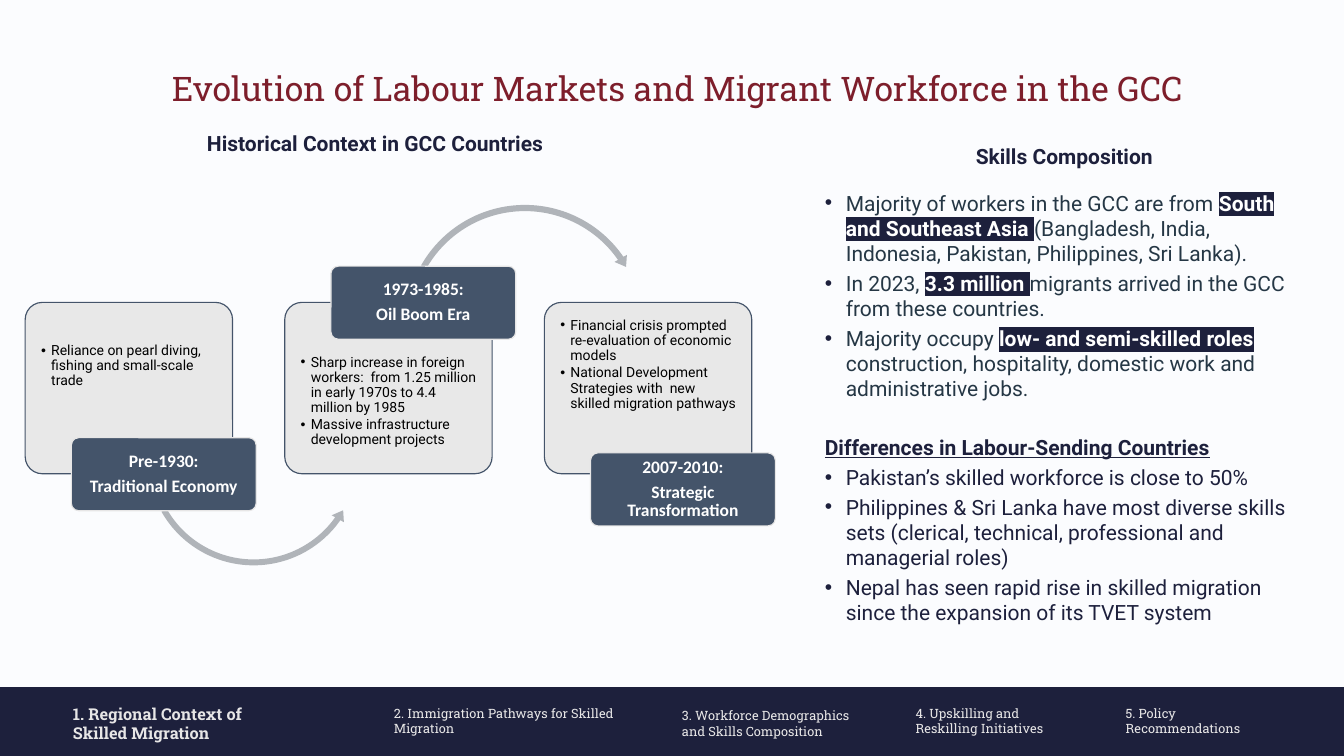
from lxml import etree
from pptx import Presentation
from pptx.dml.color import RGBColor
from pptx.enum.shapes import MSO_SHAPE
from pptx.enum.text import MSO_ANCHOR, MSO_AUTO_SIZE, PP_ALIGN
from pptx.oxml.ns import qn
from pptx.util import Pt

RECTANGLE, ROUNDED = MSO_SHAPE.RECTANGLE, MSO_SHAPE.ROUNDED_RECTANGLE
ARROW_UNDER, ARROW_OVER = MSO_SHAPE.LEFT_CIRCULAR_ARROW, MSO_SHAPE.CIRCULAR_ARROW
TOP, MIDDLE = MSO_ANCHOR.TOP, MSO_ANCHOR.MIDDLE
LEFT, CENTER = PP_ALIGN.LEFT, PP_ALIGN.CENTER

PAPER = RGBColor(0xFB, 0xFC, 0xFE)
NAVY = RGBColor(0x1D, 0x20, 0x3C)
MAROON = RGBColor(0x7D, 0x1E, 0x2B)
SLATE = RGBColor(0x44, 0x54, 0x6A)
INK = RGBColor(0x25, 0x37, 0x45)
PALE = RGBColor(0xE7, 0xE6, 0xE6)
ARROW_GREY = RGBColor(0xB0, 0xB4, 0xB9)
WHITE = RGBColor(0xFF, 0xFF, 0xFF)
BLACK = RGBColor(0, 0, 0)

TITLE = {"name": "Roboto Slab", "size": Pt(29), "bold": False, "color": MAROON}
HEADING = {"name": "Roboto", "size": Pt(18), "bold": True, "color": NAVY}
UNDERLINED = {**HEADING, "underline": True}
SKILLS = {**HEADING, "bold": False, "color": INK}
MARKED = {**HEADING, "color": WHITE, "highlight": NAVY}
COUNTRIES = {**HEADING, "bold": False}
CARD = {"name": "Roboto", "size": Pt(12), "color": BLACK}
LABEL = {"name": "Calibri", "size": Pt(15), "bold": True, "color": WHITE}
STEP = {"name": "Roboto Slab", "size": Pt(11), "color": PALE}
CURRENT_STEP = {**STEP, "size": Pt(14), "bold": True}

# Card text, inset of the card text, label text, label offset,
# arrow (preset, left, top, size, adjustments)
STAGES = [
    (["Reliance on pearl diving, fishing and small-scale trade"], 31,
     ["Pre-1930:", "Traditional Economy"], 116,
     (ARROW_UNDER, 101.5, 40.3, 188.6, (0.027, 3.351, 21.106, 90.245, 0.032))),
    (["Sharp increase in foreign workers:  from 1.25 million in early 1970s "
      "to 4.4 million by 1985",
      "Massive infrastructure development projects"], 41,
     ["1973-1985:", "Oil Boom Era"], -31,
     (ARROW_OVER, 100, -87, 211.7, (0.025, 2.97, 195.275, 125.755, 0.029))),
    (["Financial crisis prompted re-evaluation of economic models",
      "National Development Strategies with  new skilled migration pathways"], 9.4,
     ["2007-2010:", "Strategic Transformation"], 129, None),
]

# Space before, bulleted, runs
BODY = [
    (0, True, [("Majority of workers in the GCC are from ", SKILLS),
               ("South and Southeast Asia ", MARKED),
               ("(Bangladesh, India, Indonesia, Pakistan, Philippines, Sri Lanka).", SKILLS)]),
    (4, True, [("In 2023, ", SKILLS), ("3.3 million ", MARKED),
               ("migrants arrived in the GCC from these countries.", SKILLS)]),
    (4, True, [("Majority occupy ", SKILLS), ("low- and semi-skilled roles", MARKED),
               (" construction, hospitality, domestic work and administrative jobs.", SKILLS)]),
    (28.6, False, [("Differences in Labour-Sending Countries", UNDERLINED)]),
    (4, True, [("Pakistan’s skilled workforce is close to 50%", COUNTRIES)]),
    (4, True, [("Philippines & Sri Lanka have most diverse skills sets (clerical, "
                "technical, professional and managerial roles)", COUNTRIES)]),
    (4, True, [("Nepal has seen rapid rise in skilled migration since the expansion "
                "of its TVET system", COUNTRIES)]),
]

# Left, top within the bar, width, lines, format
STEPS = [
    (62.6, 14.4, 235, ["1. Regional Context of", "Skilled Migration"], CURRENT_STEP),
    (337.7, 15.8, 207, ["2. Immigration Pathways for Skilled Migration"], STEP),
    (584.6, 18, 160, ["3. Workforce Demographics and Skills Composition"], STEP),
    (784.8, 15.8, 140, ["4. Upskilling and Reskilling Initiatives"], STEP),
    (964.8, 15.8, 140, ["5. Policy Recommendations"], STEP),
]


def place(shape, box):
    for side, value in zip(("left", "top", "width", "height"), box):
        setattr(shape, side, Pt(value))


def set_frame(shape, insets, anchor=TOP):
    frame = shape.text_frame
    settings = {"word_wrap": True, "auto_size": MSO_AUTO_SIZE.NONE, "vertical_anchor": anchor}
    for side, value in zip(("left", "top", "right", "bottom"), insets):
        settings["margin_" + side] = Pt(value)
    for name, value in settings.items():
        setattr(frame, name, value)
    return frame


def add_run(paragraph, text, style):
    run = paragraph.add_run()
    run.text = text
    for name, value in style.items():
        if name == "color":
            run.font.color.rgb = value
        elif name == "highlight":
            properties = run.font._element
            highlight = etree.Element(qn("a:highlight"))
            etree.SubElement(highlight, qn("a:srgbClr"), val=str(value))
            properties.find(qn("a:solidFill")).addnext(highlight)
        else:
            setattr(run.font, name, value)


def set_bullet(paragraph, indent, color=None):
    properties = paragraph._p.get_or_add_pPr()
    properties.set("marL", str(Pt(indent)))
    properties.set("indent", str(-Pt(indent)))
    if color is not None:
        bullet_color = etree.SubElement(properties, qn("a:buClr"))
        etree.SubElement(bullet_color, qn("a:srgbClr"), val=str(color))
    etree.SubElement(properties, qn("a:buFont"), typeface="Arial")
    etree.SubElement(properties, qn("a:buChar"), char="•")


def write(frame, paragraphs, **layout):
    """Each paragraph is a list of (text, format) runs."""
    for index, runs in enumerate(paragraphs):
        paragraph = frame.add_paragraph() if index else frame.paragraphs[0]
        for name, value in layout.items():
            setattr(paragraph, name, value)
        for text, style in runs:
            add_run(paragraph, text, style)


def add_shape(slide, preset, box, fill, line=None):
    shape = slide.shapes.add_shape(preset, *map(Pt, box))
    shape.shadow.inherit = False
    shape.fill.solid()
    shape.fill.fore_color.rgb = fill
    if line is None:
        shape.line.fill.background()
    else:
        shape.line.color.rgb = line
        shape.line.width = Pt(1)
    return shape


def add_text(slide, box, lines, style, insets, alignment):
    text_box = slide.shapes.add_textbox(*map(Pt, box))
    write(set_frame(text_box, insets), [[(line, style)] for line in lines], alignment=alignment)


def fill_title(slide, box):
    place(slide.shapes.title, box)
    frame = set_frame(slide.shapes.title, (7.2, 3.6, 7.2, 3.6))
    write(frame, [[("Evolution of Labour Markets and Migrant Workforce in the GCC", TITLE)]],
          alignment=CENTER, line_spacing=Pt(39))


def fill_body(slide, box):
    body = slide.placeholders[1]
    place(body, box)
    frame = set_frame(body, (7.2, 3.6, 7.2, 3.6))
    write(frame, [runs for _, _, runs in BODY], alignment=LEFT)
    for paragraph, (space, bulleted, _) in zip(frame.paragraphs, BODY):
        paragraph.space_before = Pt(space)
        if bulleted:
            set_bullet(paragraph, 18, NAVY)
        else:
            properties = paragraph._p.get_or_add_pPr()
            properties.set("marL", "0")
            properties.set("indent", "0")
            etree.SubElement(properties, qn("a:buNone"))


def add_stage(slide, box, points, text_top, label_lines, label_top, arrow):
    left, top, _, _ = box
    # Card
    card = add_shape(slide, ROUNDED, box, PALE, SLATE)
    card.adjustments[0] = 0.1
    color = card._element.spPr.find(qn("a:solidFill"))[0]
    etree.SubElement(color, qn("a:alpha"), val="90000")
    frame = set_frame(card, (9.4, text_top, 8, 0))
    write(frame, [[(point, CARD)] for point in points],
          alignment=LEFT, line_spacing=0.9, space_after=Pt(1.8))
    for paragraph in frame.paragraphs:
        set_bullet(paragraph, 8.64)
    # Arrow to the next stage
    if arrow:
        preset, across, down, size, adjustments = arrow
        curve = add_shape(slide, preset, (left + across, top + down, size, size), ARROW_GREY)
        for index, value in enumerate(adjustments):
            curve.adjustments[index] = value
    # Period label
    label = add_shape(slide, ROUNDED, (left + 39.6, top + label_top, 158.4, 62.6), SLATE, PALE)
    label.adjustments[0] = 0.1
    write(set_frame(label, (3, 0, 3, 0), MIDDLE), [[(line, LABEL)] for line in label_lines],
          alignment=CENTER, line_spacing=0.9, space_after=Pt(5.25))


def add_timeline(slide, box):
    left, top, width, height = box
    pitch = 222.5
    card_width = width - pitch * (len(STAGES) - 1)
    for index, stage in enumerate(STAGES):
        add_stage(slide, (left + index * pitch, top, card_width, height), *stage)


def add_navigation(slide, box):
    add_shape(slide, RECTANGLE, box, NAVY)
    for left, top, width, lines, style in STEPS:
        add_text(slide, (box[0] + left, box[1] + top, width, 28), lines, style, (0, 0, 0, 0), LEFT)


def main():
    presentation = Presentation()
    presentation.slide_width, presentation.slide_height = Pt(1152), Pt(648)
    slide = presentation.slides.add_slide(presentation.slide_layouts[1])
    slide.background.fill.solid()
    slide.background.fill.fore_color.rgb = PAPER
    add_navigation(slide, (0, 589, 1152, 59))
    fill_title(slide, (101.5, 50.4, 959, 44.6))
    add_timeline(slide, (21.6, 259.2, 622.8, 146.9))
    fill_body(slide, (699.8, 159.3, 422, 350))
    for box, heading in (((149.8, 108.7, 343.4, 28.8), "Historical Context in GCC Countries"),
                         ((720, 119.5, 384.5, 28.8), "Skills Composition")):
        add_text(slide, box, [heading], HEADING, (7.2, 3.6, 7.2, 3.6), CENTER)
    presentation.save("out.pptx")


if __name__ == "__main__":
    main()
